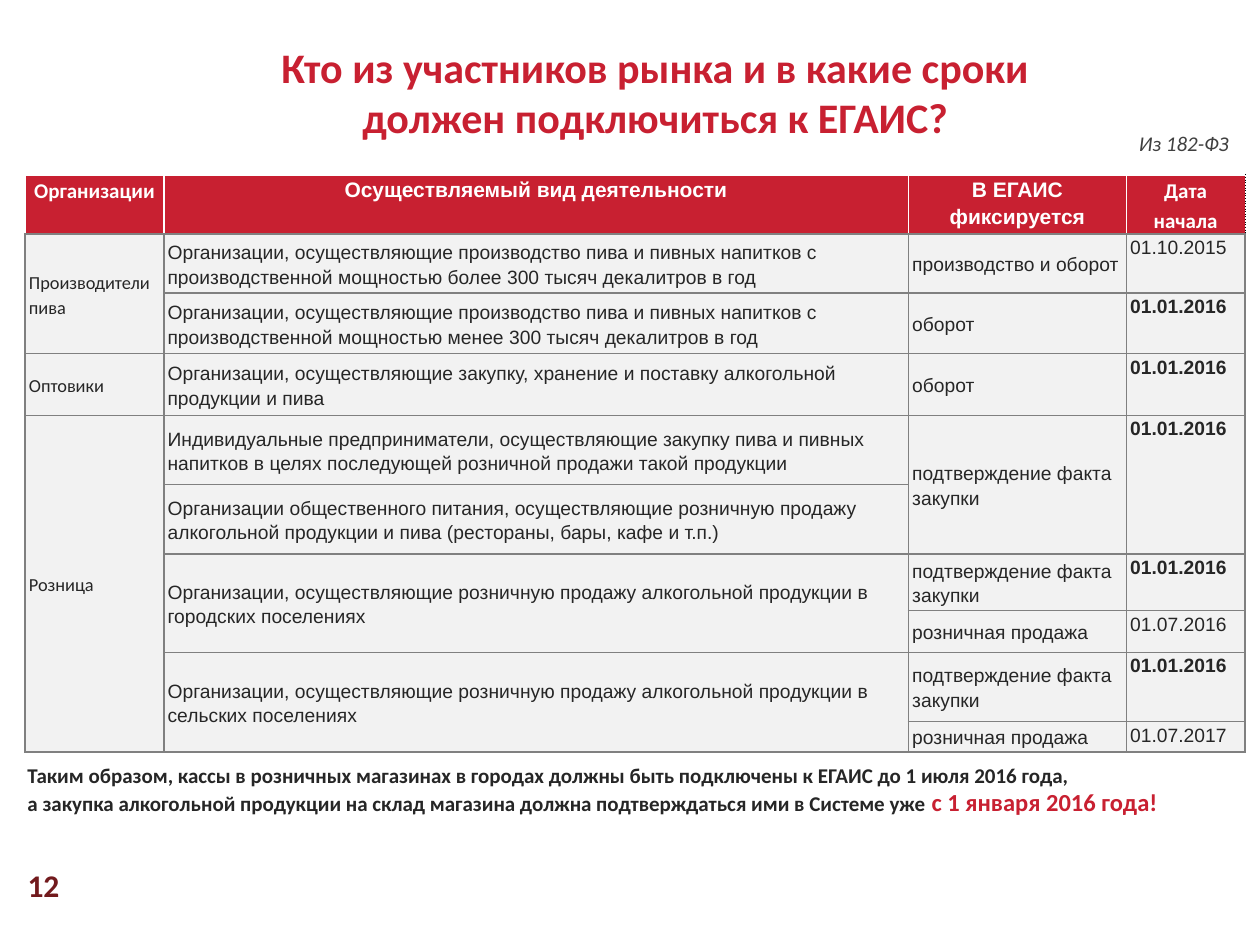
from lxml.etree import SubElement
from pptx import Presentation
from pptx.dml.color import RGBColor
from pptx.enum.text import MSO_ANCHOR, MSO_AUTO_SIZE, PP_ALIGN
from pptx.oxml import parse_xml
from pptx.oxml.ns import nsdecls
from pptx.util import Inches, Pt

THEME = {
    "red": "C82031", "dark_red": "721A1D", "ink": "262626", "note": "404040",
    "white": "FFFFFF", "cell": "F2F2F2", "grid": "808080", "black": "000000",
    "head": "Calibri", "body": "Arial",
    "title": 24, "number": 18, "accent": 14, "text": 12, "cell_text": 11, "group": 10.5,
}

TITLE = ["Кто из участников рынка и в какие сроки", "должен подключиться к ЕГАИС?"]
LAW = "Из 182-ФЗ"
PAGE = "12"
SUMMARY = [
    "Таким образом, кассы в розничных магазинах в городах должны быть подключены к ЕГАИС до 1 июля 2016 года,",
    "а закупка алкогольной продукции на склад магазина должна подтверждаться ими в Системе уже ",
]
DEADLINE = "с 1 января 2016 года!"

HEADER = [("Организации", "head"), ("Осуществляемый вид деятельности", "body"),
          ("В ЕГАИС фиксируется", "body"), ("Дата начала", "head")]
CONFIRM, RETAIL, TURNOVER = "подтверждение факта закупки", "розничная продажа", "оборот"
MAIN_DATE = "01.01.2016"
# None continues the cell above.
ROWS = [
    ("Производители пива",
     "Организации, осуществляющие производство пива и пивных напитков с "
     "производственной мощностью более 300 тысяч декалитров в год",
     "производство и оборот", "01.10.2015"),
    (None,
     "Организации, осуществляющие производство пива и пивных напитков с "
     "производственной мощностью менее 300 тысяч декалитров в год",
     TURNOVER, MAIN_DATE),
    ("Оптовики",
     "Организации, осуществляющие закупку, хранение и поставку алкогольной продукции и пива",
     TURNOVER, MAIN_DATE),
    ("Розница",
     "Индивидуальные предприниматели, осуществляющие закупку пива и пивных "
     "напитков в целях последующей розничной продажи такой продукции",
     CONFIRM, MAIN_DATE),
    (None,
     "Организации общественного питания, осуществляющие розничную продажу "
     "алкогольной продукции и пива (рестораны, бары, кафе и т.п.)",
     None, None),
    (None,
     "Организации, осуществляющие розничную продажу алкогольной продукции в городских поселениях",
     CONFIRM, MAIN_DATE),
    (None, None, RETAIL, "01.07.2016"),
    (None,
     "Организации, осуществляющие розничную продажу алкогольной продукции в сельских поселениях",
     CONFIRM, MAIN_DATE),
    (None, None, RETAIL, "01.07.2017"),
]
COL_WIDTHS = [1.1, 5.91, 1.73, 0.94]
ROW_HEIGHTS = [0.45, 0.47, 0.48, 0.49, 0.55, 0.55, 0.45, 0.33, 0.55, 0.24]


def add_run(p, text, size="text", color="ink", font="head", bold=False, italic=False):
    r = p.add_run()
    r.text = text
    r.font.size = Pt(THEME[size])
    r.font.name = THEME[font]
    r.font.bold = bold
    r.font.italic = italic
    r.font.color.rgb = RGBColor.from_string(THEME[color])


def write(tf, lines, align=PP_ALIGN.LEFT, anchor=MSO_ANCHOR.TOP, wrap=True, **fmt):
    tf.word_wrap = wrap
    tf.auto_size = MSO_AUTO_SIZE.NONE
    tf.vertical_anchor = anchor
    for i, line in enumerate(lines):
        p = tf.add_paragraph() if i else tf.paragraphs[0]
        p.alignment = align
        add_run(p, line, **fmt)


def add_text(s, box, lines, **fmt):
    tf = s.shapes.add_textbox(*map(Inches, box)).text_frame
    write(tf, lines, **fmt)
    return tf


def set_borders(cell, lines):
    """Put border lines, given as {side: (color, points, dash)}, before the fill."""
    tcPr = cell._tc.get_or_add_tcPr()
    for i, side in enumerate("LRTB"):
        color, width, dash = lines[side]
        tcPr.insert(i, parse_xml(
            f'<a:ln{side} {nsdecls("a")} w="{Pt(width)}"><a:solidFill>'
            f'<a:srgbClr val="{THEME[color]}"/></a:solidFill>'
            f'<a:prstDash val="{dash}"/></a:ln{side}>'))


def format_cell(cell, fill, borders):
    cell.margin_left = cell.margin_right = Inches(0.03)
    cell.margin_top = cell.margin_bottom = 0
    cell.fill.solid()
    cell.fill.fore_color.rgb = RGBColor.from_string(THEME[fill])
    set_borders(cell, borders)


def fill_cell(cell, text, align=PP_ALIGN.LEFT, anchor=MSO_ANCHOR.MIDDLE, **fmt):
    cell.vertical_anchor = anchor
    p = cell.text_frame.paragraphs[0]
    p.alignment = align
    p.line_spacing = 1.15
    p.space_after = Pt(10)
    add_run(p, text, **fmt)


def add_schedule(s):
    frame = s.shapes.add_table(len(ROW_HEIGHTS), len(COL_WIDTHS), Inches(0.2), Inches(1.39),
                               Inches(sum(COL_WIDTHS)), Inches(sum(ROW_HEIGHTS)))
    table = frame.table
    table.first_row = table.horz_banding = False
    for col, width in zip(table.columns, COL_WIDTHS):
        col.width = Inches(width)
    for row, height in zip(table.rows, ROW_HEIGHTS):
        row.height = Inches(height)

    grid = dict.fromkeys("LRTB", ("grid", 1, "solid"))
    head = {**dict.fromkeys("LRT", ("white", 1, "solid")), "B": grid["B"]}
    last = len(HEADER) - 1
    for c, (text, font) in enumerate(HEADER):
        cell = table.cell(0, c)
        borders = {**head, "R": ("black", 0.25, "sysDot")} if c == last else head
        format_cell(cell, "red", borders)
        fill_cell(cell, text, PP_ALIGN.CENTER, MSO_ANCHOR.TOP,
                  font=font, color="white", bold=True)

    for c, column in enumerate(zip(*ROWS)):
        starts = [i for i, text in enumerate(column) if text]
        for start, end in zip(starts, starts[1:] + [len(column)]):
            for r in range(start, end):
                format_cell(table.cell(r + 1, c), "cell", grid)
            cell = table.cell(start + 1, c)
            if end - start > 1:
                cell.merge(table.cell(end, c))
            text = column[start]
            fill_cell(cell, text,
                      anchor=MSO_ANCHOR.TOP if c == last else MSO_ANCHOR.MIDDLE,
                      size="cell_text" if c else "group",
                      font="body" if c else "head", bold=text == MAIN_DATE)


def main():
    prs = Presentation()
    prs.slide_width, prs.slide_height = Inches(10), Inches(7.5)
    s = prs.slides.add_slide(prs.slide_layouts[5])

    title = s.shapes.title
    title.left, title.top, title.width, title.height = map(Inches, (1.93, 0.28, 6.54, 0.91))
    write(title.text_frame, TITLE, PP_ALIGN.CENTER, size="title", color="red", bold=True)
    for p in title.text_frame.paragraphs:
        p.space_before = 0

    add_schedule(s)
    summary = add_text(s, (0.12, 6, 9.76, 0.54), SUMMARY, bold=True)
    add_run(summary.paragraphs[-1], DEADLINE, size="accent", color="red", bold=True)
    add_text(s, (8.94, 0.99, 0.92, 0.3), [LAW], wrap=False, color="note", italic=True)
    add_text(s, (0.12, 6.82, 0.62, 0.4), [PAGE], anchor=MSO_ANCHOR.MIDDLE,
             size="number", color="dark_red", bold=True)
    prs.save("out.pptx")


if __name__ == "__main__":
    main()
